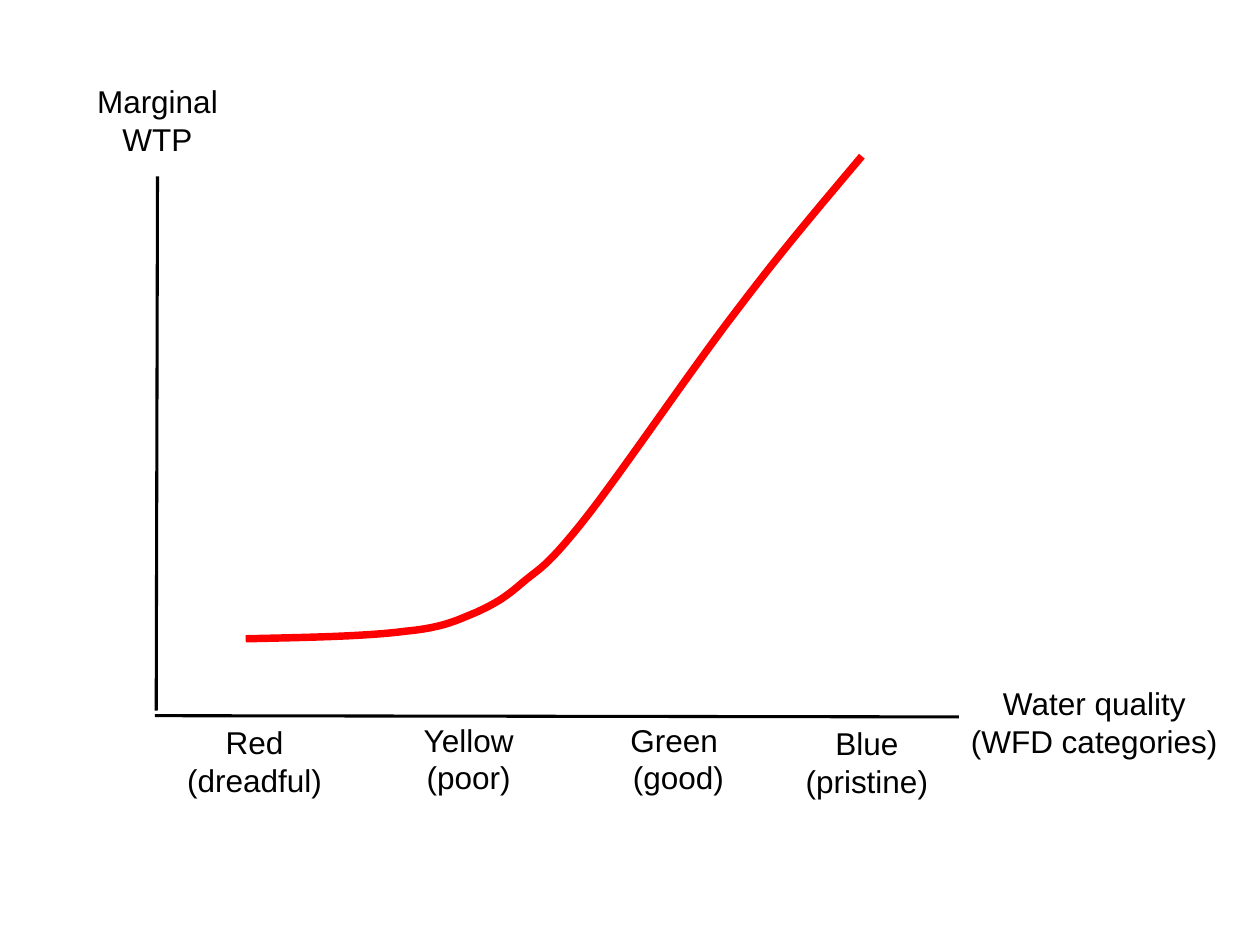
from lxml.etree import SubElement
from pptx import Presentation
from pptx.dml.color import RGBColor
from pptx.enum.shapes import MSO_CONNECTOR
from pptx.enum.text import MSO_AUTO_SIZE, PP_ALIGN
from pptx.oxml.ns import qn
from pptx.util import Inches, Pt

BLACK = RGBColor(0, 0, 0)
RED = RGBColor(255, 0, 0)

deck = Presentation()
deck.slide_width, deck.slide_height = Inches(10), Inches(7.5)
slide = deck.slides.add_slide(deck.slide_layouts[6])
shapes = slide.shapes

axes = [(1.24, 5.64, 1.25, 1.4), (1.23, 5.68, 7.61, 5.69)]
for ends in axes:
    axis = shapes.add_connector(MSO_CONNECTOR.STRAIGHT, *map(Inches, ends))
    axis.line.color.rgb = BLACK
    axis.line.width = Pt(1.75)
    SubElement(axis._element.spPr, qn("a:effectLst"))

labels = [
    ("Marginal WTP", 0.48, 0.6, 1.54),
    ("Water quality\n(WFD categories)", 7.48, 5.38, 2.41),
    ("Red\n(dreadful)", 1.35, 5.69, 1.34),
    ("Yellow\n(poor)", 3.12, 5.67, 1.2),
    ("Green \n(good)", 4.75, 5.67, 1.27),
    ("Blue (pristine)", 6.25, 5.7, 1.26),
]
for text, left, top, width in labels:
    box = shapes.add_textbox(Inches(left), Inches(top), Inches(width), Inches(0.71))
    frame = box.text_frame
    frame.word_wrap = True
    frame.auto_size = MSO_AUTO_SIZE.SHAPE_TO_FIT_TEXT
    frame.text = text
    for para in frame.paragraphs:
        para.alignment = PP_ALIGN.CENTER
        for run in para.runs:
            run.font.name = "Arial"
            run.font.size = Pt(18)
            run.font.color.rgb = BLACK

start = (1.95, 5.07)
bends = [
    ((2.44, 5.06), (2.92, 5.05), (3.22, 5.01)),
    ((3.53, 4.98), (3.63, 4.92), (3.78, 4.86)),
    ((3.93, 4.79), (4, 4.75), (4.14, 4.63)),
    ((4.28, 4.51), (4.32, 4.52), (4.61, 4.16)),
    ((4.9, 3.8), (5.48, 2.94), (5.85, 2.46)),
    ((6.22, 1.97), (6.53, 1.61), (6.84, 1.24)),
]
steps = 12
points = []
here = start
for first, second, end in bends:
    for step in range(1, steps + 1):
        t = step / steps
        u = 1 - t
        points.append([
            Inches(u**3 * a + 3 * u**2 * t * b + 3 * u * t**2 * c + t**3 * d)
            for a, b, c, d in zip(here, first, second, end)
        ])
    here = end

pen = shapes.build_freeform(*map(Inches, start))
pen.add_line_segments(points, close=False)
curve = pen.convert_to_shape()
curve.shadow.inherit = False
curve.fill.background()
curve.line.color.rgb = RED
curve.line.width = Pt(4.25)

deck.save("out.pptx")
